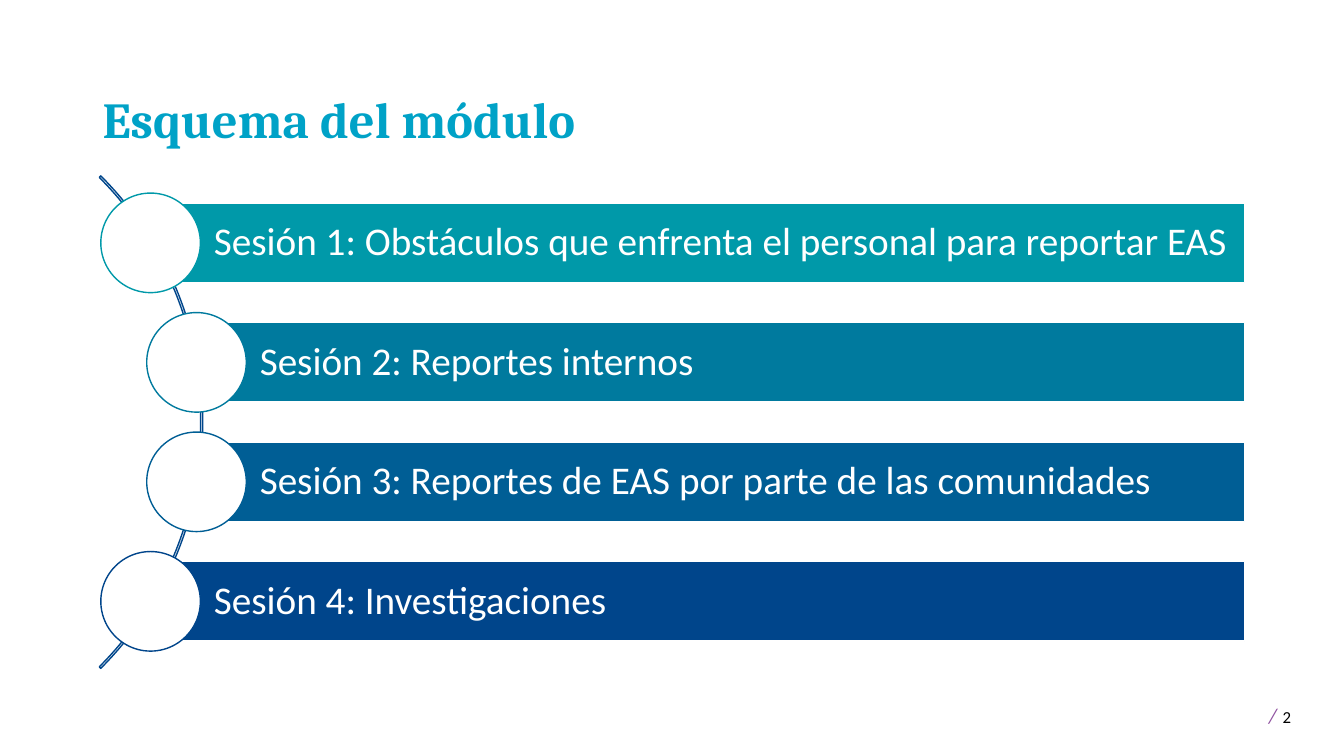
from math import sqrt

from pptx import Presentation
from pptx.dml.color import RGBColor
from pptx.enum.shapes import MSO_SHAPE as Preset
from pptx.enum.text import MSO_ANCHOR as Anchor, PP_ALIGN as Align
from pptx.util import Pt

COLORS = {
    "white": "FFFFFF",
    "black": "000000",
    "title": "00A2C7",
    "slash": "9053A1",
    "arc": "00468B",
}
SESSIONS = [
    ("Sesión 1: Obstáculos que enfrenta el personal para reportar EAS", "0099A9"),
    ("Sesión 2: Reportes internos", "007A9E"),
    ("Sesión 3: Reportes de EAS por parte de las comunidades", "005E95"),
    ("Sesión 4: Investigaciones", "00458B"),
]


def style_font(run, size, color, name="Calibri", bold=False, italic=False):
    run.font.name, run.font.size = name, Pt(size)
    run.font.bold, run.font.italic = bold, italic
    run.font.color.rgb = RGBColor.from_string(color)


def set_margins(frame, left, top, right, bottom):
    frame.margin_left, frame.margin_top = Pt(left), Pt(top)
    frame.margin_right, frame.margin_bottom = Pt(right), Pt(bottom)


def add_preset(slide, preset, box, line, fill=None):
    shape = slide.shapes.add_shape(preset, *map(Pt, box))
    shape.shadow.inherit = False
    if fill:
        shape.fill.solid()
        shape.fill.fore_color.rgb = RGBColor.from_string(fill)
    else:
        shape.fill.background()
    shape.line.color.rgb = RGBColor.from_string(line)
    shape.line.width = Pt(1)
    return shape


def add_title(slide, box, text):
    frame = slide.shapes.add_textbox(*map(Pt, box)).text_frame
    frame.word_wrap = True
    frame.vertical_anchor = Anchor.BOTTOM
    frame.text = text
    paragraph = frame.paragraphs[0]
    paragraph.line_spacing = 0.9
    style_font(paragraph.runs[0], 36, COLORS["title"], "Cambria", bold=True)


def add_page_number(slide, box, number):
    frame = slide.shapes.add_textbox(*map(Pt, box)).text_frame
    frame.word_wrap = True
    set_margins(frame, 11.3, 3.6, 7.2, 3.6)
    paragraph = frame.paragraphs[0]
    pieces = [("/", 15, "slash"), (" ", 18, "black"), (number, 12, "black")]
    for text, size, color in pieces:
        run = paragraph.add_run()
        run.text = text
        style_font(run, size, COLORS[color], italic=text == "/")


def add_session(slide, box, text, color):
    """Draw a labelled bar whose left end is covered by a circle."""
    left, top, width, height = box
    circle = 1.25 * height
    bar_box = left + circle / 2, top, width - circle / 2, height
    bar = add_preset(slide, Preset.RECTANGLE, bar_box, COLORS["white"], color)
    frame = bar.text_frame
    frame.word_wrap = True
    frame.vertical_anchor = Anchor.MIDDLE
    set_margins(frame, 45.2, 5.6, 5.6, 5.6)
    frame.text = text
    paragraph = frame.paragraphs[0]
    paragraph.alignment = Align.LEFT
    paragraph.line_spacing = 0.9
    style_font(paragraph.runs[0], 28, COLORS["white"])
    circle_box = left, top - height / 8, circle, circle
    add_preset(slide, Preset.OVAL, circle_box, color, COLORS["white"])


def add_curved_list(slide, box, sessions):
    """Place the sessions evenly along a quarter arc as tall as the box."""
    left, top, width, height = box
    middle = top + height / 2
    diameter = height * sqrt(2)
    arc_box = left - (diameter + height) / 2, middle - diameter / 2, diameter, diameter
    arc = add_preset(slide, Preset.BLOCK_ARC, arc_box, COLORS["arc"])
    for index, value in enumerate((189, 27, 0.0031)):
        arc.adjustments[index] = value

    bar_height = 56.9
    pitch = 1.5 * bar_height
    last = len(sessions) - 1
    for index, (text, color) in enumerate(sessions):
        indent = 0 if index in (0, last) else 32.8
        bar_top = middle + (index - last / 2) * pitch - bar_height / 2
        bar_box = left + indent, bar_top, width - indent, bar_height
        add_session(slide, bar_box, text, color)


def main():
    presentation = Presentation()
    presentation.slide_width, presentation.slide_height = Pt(960), Pt(540)
    slide = presentation.slides.add_slide(presentation.slide_layouts[6])
    add_page_number(slide, (895, 495.4, 62.6, 28.8), "2")
    add_curved_list(slide, (72, 125.6, 817, 351.8), SESSIONS)
    add_title(slide, (66.2, 28.8, 828, 81.4), "Esquema del módulo")
    presentation.save("out.pptx")


if __name__ == "__main__":
    main()
